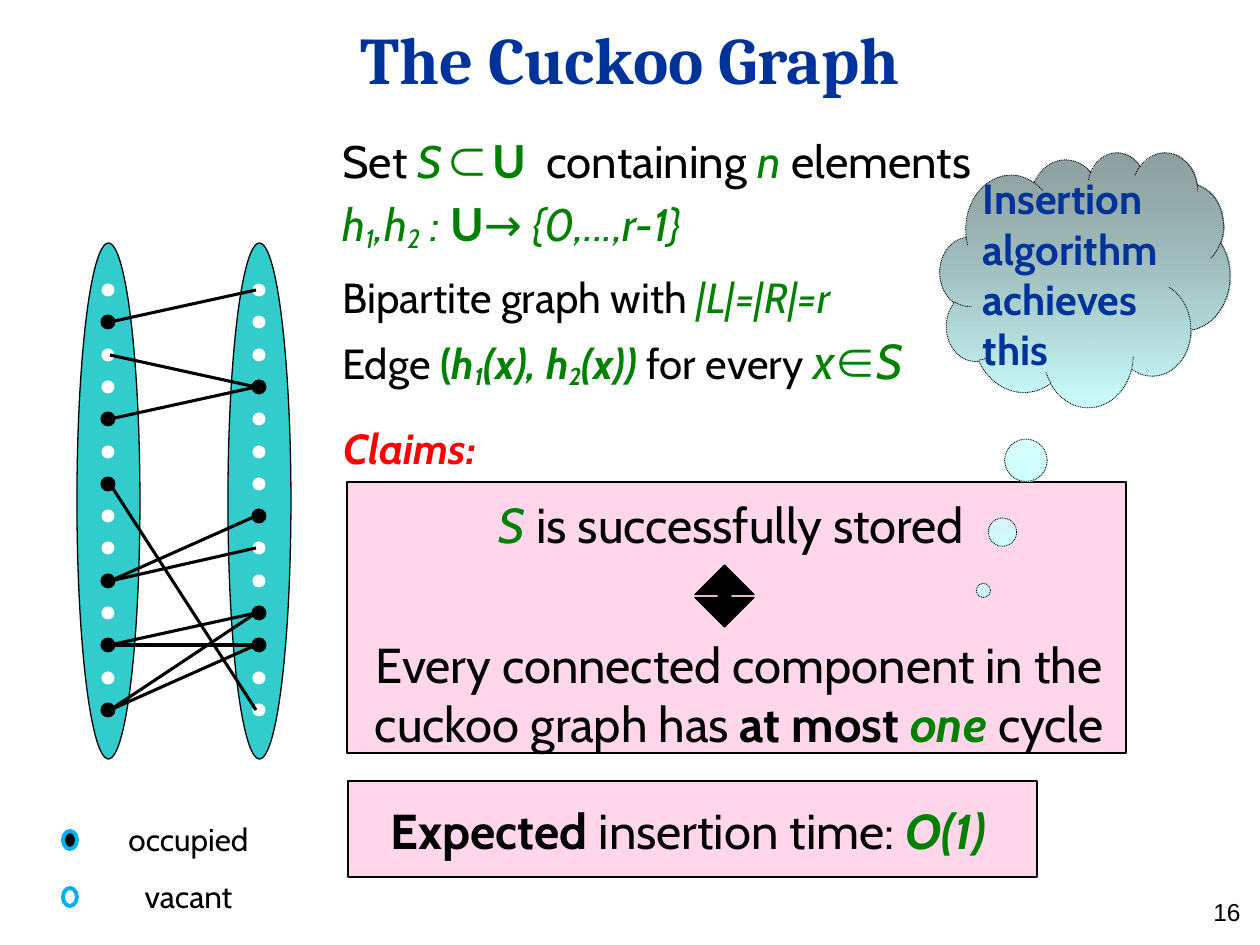
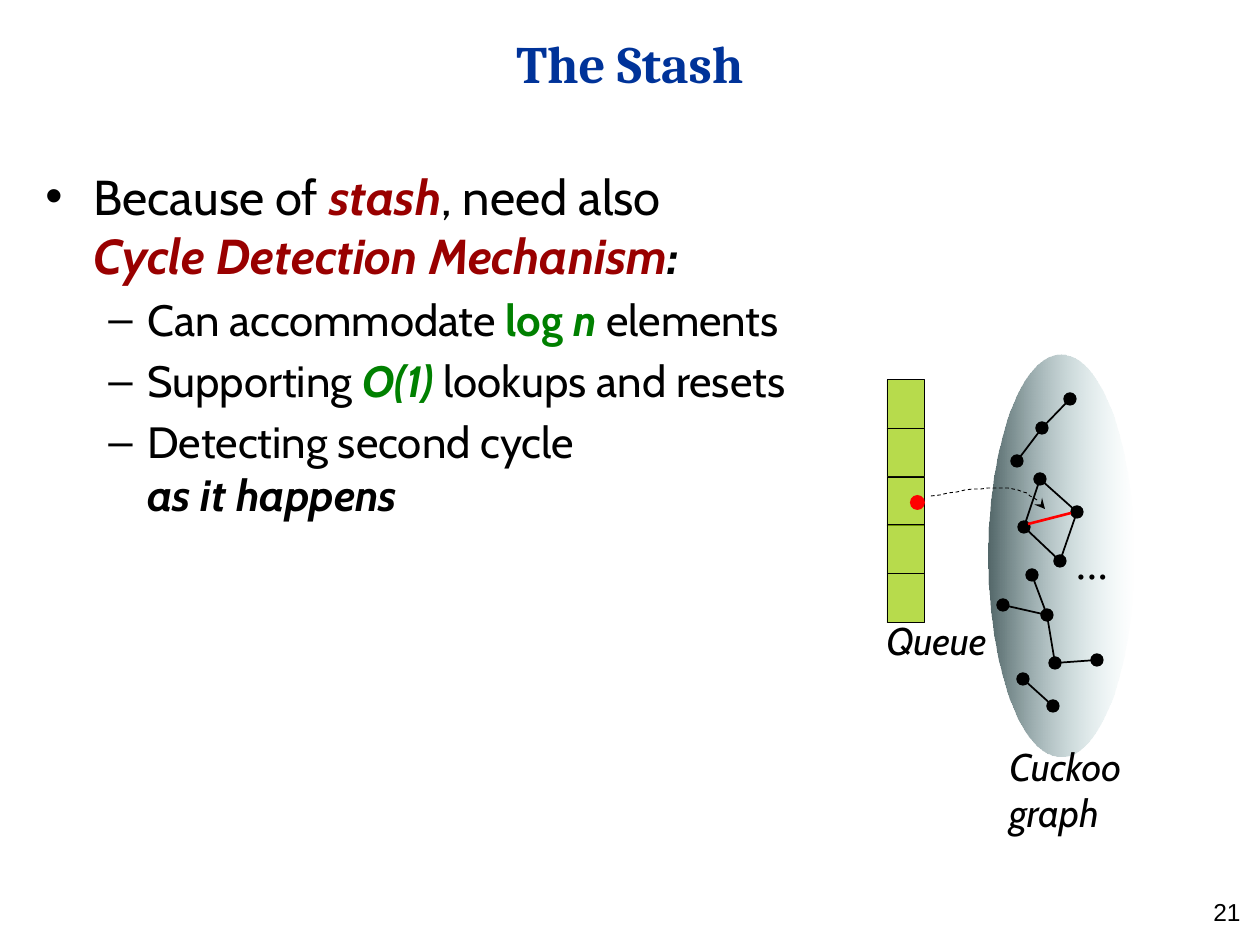
from lxml.etree import SubElement
from pptx import Presentation
from pptx.dml.color import RGBColor
from pptx.enum.dml import MSO_LINE
from pptx.enum.shapes import MSO_CONNECTOR, MSO_SHAPE
from pptx.enum.text import MSO_ANCHOR, PP_ALIGN
from pptx.oxml.ns import qn
from pptx.util import Pt

EMU_PER_PX = 914400 / 126
COLOURS = {
    "black": "000000", "white": "FFFFFF", "navy": "003399", "green": "008000",
    "red": "FF0000", "maroon": "990000", "pink": "FF99CC", "teal": "33CCCC",
    "sky": "00B0F0", "lime": "99CC00", "slate": "536769", "mist": "BBE0E3",
    "cloud_top": "5E7676", "cloud_bottom": "CCFFFF",
}
FONTS = {
    "cabin": "Cabin", "lato": "Lato", "cambria": "Cambria", "arial": "Arial",
    "times": "Times New Roman", "subset": "Noto Sans CJK KR", "member": "Noto Sans CJK SC",
}
RGB = {name: RGBColor.from_string(value) for name, value in COLOURS.items()}
CENTER, RIGHT, LEFT = PP_ALIGN.CENTER, PP_ALIGN.RIGHT, PP_ALIGN.LEFT


def add_shape(slide, kind, box, fill=(), line=None, width=0.75, angle=0):
    """Fill is a list of (colour, opacity percent): none, one solid, or two gradient stops."""
    shape = slide.shapes.add_shape(kind, *[round(v * EMU_PER_PX) for v in box])
    shape.shadow.inherit = False
    if len(fill) == 2:
        shape.fill.gradient()
        shape.fill.gradient_angle = angle
        for stop, (colour, _) in zip(shape.fill.gradient_stops, fill):
            stop.color.rgb = RGB[colour]
    elif fill:
        shape.fill.solid()
        shape.fill.fore_color.rgb = RGB[fill[0][0]]
    else:
        shape.fill.background()
    colour_nodes = list(shape._element.spPr.iter(qn("a:srgbClr")))
    for node, (_, opacity) in zip(colour_nodes, fill):
        if opacity < 100:
            SubElement(node, qn("a:alpha")).set("val", str(opacity * 1000))
    if line:
        shape.line.color.rgb = RGB[line]
        shape.line.width = Pt(width)
    else:
        shape.line.fill.background()
    return shape


def add_text(slide, box, paragraphs, size, align=LEFT, anchor=MSO_ANCHOR.TOP, shape=None):
    """Write runs of (text, style words) into a new text box, or into the given shape."""
    shape = shape or slide.shapes.add_textbox(*[round(v * EMU_PER_PX) for v in box])
    frame = shape.text_frame
    frame.word_wrap = True
    frame.vertical_anchor = anchor
    for index, runs in enumerate(paragraphs):
        paragraph = frame.add_paragraph() if index else frame.paragraphs[0]
        paragraph.alignment = align
        if index:
            paragraph.space_before = Pt(round(size * 0.2))
        for text, style in runs:
            if text == "\n":
                paragraph.add_line_break()
                continue
            run = paragraph.add_run()
            run.text = text
            words = style.split()
            font = run.font
            font.bold = "b" in words
            font.italic = "i" in words
            font.size = Pt(next((int(w) for w in words if w.isdigit()), size))
            font.color.rgb = RGB[next((w for w in words if w in COLOURS), "black")]
            font.name = FONTS[next((w for w in words if w in FONTS), "cabin")]
            properties = run._r.get_or_add_rPr()
            SubElement(properties, qn("a:ea")).set("typeface", font.name)
            if "sub" in words:
                properties.set("baseline", "-15000")
    return shape


presentation = Presentation()
presentation.slide_width = round(1260 * EMU_PER_PX)
presentation.slide_height = round(945 * EMU_PER_PX)

slides = []
for title, title_size, title_top, number in [
    ("The Cuckoo Graph", 38, 5, "16"),
    ("The Stash", 30, 10, "21"),
]:
    slide = presentation.slides.add_slide(presentation.slide_layouts[6])
    add_text(slide, (0, title_top, 1260, 105), [[(title, "b navy cambria")]],
             title_size, CENTER, MSO_ANCHOR.MIDDLE)
    add_text(slide, (960, 891, 293, 35), [[(number, "arial")]], 14, RIGHT)
    slides.append(slide)
graph_slide, stash_slide = slides

# The cuckoo graph: definitions
add_text(graph_slide, (330, 127, 717, 154), [
    [("Set ", ""), ("S", "green i"), (" ", "10"), ("⊂", "green 24 subset"), (" ", "10"),
     ("U", "green b lato"), ("  containing ", ""), ("n", "green i"), (" elements", "")],
    [("h", "green i"), ("1", "green i sub"), (",h", "green i"), ("2", "green i sub"),
     (" : ", "green i"), ("U", "green b lato"), ("→ {0,...,r-1}", "green i")],
], 26)
add_text(graph_slide, (330, 265, 620, 147), [
    [("Bipartite graph with ", ""), ("|L|=|R|=r", "green i")],
    [("Edge ", ""), ("(", "green b"), ("h", "green b i"), ("1", "green b i sub"),
     ("(x), h", "green b i"), ("2", "green b i sub"), ("(x)) ", "green b i"),
     ("for every ", ""), ("x", "green i 28"), ("∈", "green member"), ("S", "green i 28")],
], 24)

# Claims
add_text(graph_slide, (331, 416, 180, 84), [[("Claims:", "red b i")]], 24)
for claim_box in [(347, 482, 779, 271), (348, 781, 689, 96)]:
    add_shape(graph_slide, MSO_SHAPE.RECTANGLE, claim_box, [("pink", 40)], "black")
for claim_box, runs in [
    ((323, 488, 828, 72), [("S", "green i"), (" is successfully stored ", "")]),
    ((325, 628, 828, 131), [("Every connected component in the cuckoo graph has ", ""),
                            ("at most ", "b"), ("one", "green b i"), (" cycle", "")]),
    ((372, 794, 644, 72), [("Expected", "b"), (" insertion time: ", ""),
                           ("O(1) ", "green b i")]),
]:
    add_text(graph_slide, claim_box, [runs], 28, CENTER)
equivalence = add_shape(graph_slide, MSO_SHAPE.UP_DOWN_ARROW, (695, 565, 59, 62),
                        [("black", 100)], "black")
equivalence.adjustments[0] = 0.5
equivalence.adjustments[1] = 0.21

# Bipartite graph
ROWS = 14
row_centres = [290 + round(420 * row / (ROWS - 1)) for row in range(ROWS)]
for centre_x, occupied_rows in [(108, {1, 4, 6, 9, 11, 13}), (259, {3, 7, 10, 11})]:
    add_shape(graph_slide, MSO_SHAPE.OVAL, (centre_x - 31, 243, 63, 516),
              [("teal", 100)], "black")
    for row, centre_y in enumerate(row_centres):
        colour, diameter = ("black", 15) if row in occupied_rows else ("white", 13)
        add_shape(graph_slide, MSO_SHAPE.OVAL,
                  (centre_x - diameter / 2, centre_y - diameter / 2, diameter, diameter),
                  [(colour, 100)])
element_edges = [(1, 0), (2, 3), (4, 3), (6, 13), (9, 7), (9, 8),
                 (11, 10), (11, 11), (13, 11), (13, 10)]
lines = [(graph_slide, (110, row_centres[left]), (256, row_centres[right]), "black", 1.75)
         for left, right in element_edges]

# Legend
for label, centre_y, fill in [("occupied", 840, [("black", 100)]), ("vacant", 897, [])]:
    add_shape(graph_slide, MSO_SHAPE.OVAL, (63, centre_y - 9, 14, 18), fill, "sky", 2.25)
    add_text(graph_slide, (101, centre_y - 26, 175, 50), [[(label, "")]], 18, CENTER)

# Thought cloud
cloud = add_shape(graph_slide, MSO_SHAPE.CLOUD_CALLOUT, (940, 152, 290, 255),
                  [("cloud_top", 70), ("cloud_bottom", 100)], "black", 0.5, 270)
cloud.line.dash_style = MSO_LINE.ROUND_DOT
cloud.adjustments[0] = -0.35
cloud.adjustments[1] = 1.22
add_text(graph_slide, None, [[("Insertion algorithm achieves this", "navy b")]], 24,
         anchor=MSO_ANCHOR.MIDDLE, shape=cloud)
cloud_frame = cloud.text_frame
cloud_frame.margin_left = cloud_frame.margin_right = round(3 * EMU_PER_PX)
cloud_frame.margin_top = cloud_frame.margin_bottom = round(3 * EMU_PER_PX)

# The stash: bullets
bullets = add_text(stash_slide, (33, 160, 1227, 575), [
    [("Because of ", "28"), ("stash", "28 maroon b i"), (", need also ", "28"), ("\n", ""),
     ("Cycle Detection Mechanism", "28 maroon b i"), (":", "28 b i")],
    [("Can accommodate ", ""), ("log", "green b"), (" n", "green b i"), (" elements", "")],
    [("Supporting ", ""), ("O(1)", "green b i"), (" lookups and resets", "")],
    [("Detecting second cycle ", ""), ("\n", ""), ("as it happens", "b i")],
], 25)
for index, paragraph in enumerate(bullets.text_frame.paragraphs):
    mark, margin, hanging = ("–", 102, 39) if index else ("•", 48, 48)
    properties = paragraph._p.get_or_add_pPr()
    properties.set("marL", str(round(margin * EMU_PER_PX)))
    properties.set("indent", str(round(-hanging * EMU_PER_PX)))
    SubElement(properties, qn("a:buFont")).set("typeface", "Arial")
    SubElement(properties, qn("a:buChar")).set("char", mark)

# Queue
for cell in range(5):
    add_shape(stash_slide, MSO_SHAPE.RECTANGLE, (887, 380 + 97 * cell // 2, 38, 49),
              [("lime", 70)], "black", 0.5)
add_text(stash_slide, (857, 611, 159, 59), [[("Queue", "i")]], 22, CENTER)

# Components of the cuckoo graph
add_shape(stash_slide, MSO_SHAPE.OVAL, (988, 355, 145, 402), [("slate", 100), ("mist", 0)])
add_text(stash_slide, (997, 737, 171, 105), [[("Cuckoo", "i"), ("\n", ""), ("graph", "i")]], 22)
add_text(stash_slide, (1057, 530, 72, 66), [[("...", "i times")]], 25, CENTER)
components = [
    ([(1017, 461), (1042, 428), (1070, 399)], [(0, 1), (1, 2)]),
    ([(1040, 479), (1077, 512), (1060, 561), (1024, 527)], [(0, 1), (1, 2), (2, 3), (3, 0)]),
    ([(1047, 615), (1003, 605), (1032, 575), (1055, 663), (1097, 660)],
     [(0, 1), (0, 2), (0, 3), (3, 4)]),
    ([(1023, 679), (1053, 706)], [(0, 1)]),
]
for nodes, edges in components:
    for x, y in nodes:
        add_shape(stash_slide, MSO_SHAPE.OVAL, (x - 6, y - 6, 12, 12), [("black", 100)], "black")
    lines += [(stash_slide, nodes[a], nodes[b], "black", 1) for a, b in edges]
lines.append((stash_slide, (1028, 524), (1071, 513), "red", 1.5))

# Queued element and its way into the cycle
add_shape(stash_slide, MSO_SHAPE.OVAL, (910, 495, 15, 15), [("red", 100)])
curves = [((931, 496), (960, 491), (989, 486), (1008, 488)),
          ((1008, 488), (1027, 490), (1036, 499), (1045, 509))]
STEPS = 10
curve_points = []
for start, first, second, end in curves:
    for t in [step / STEPS for step in range(1, STEPS + 1)]:
        weights = ((1 - t) ** 3, 3 * t * (1 - t) ** 2, 3 * t * t * (1 - t), t ** 3)
        curve_points.append(tuple(
            sum(weight * point[axis] for weight, point in zip(weights, (start, first, second, end)))
            for axis in (0, 1)))
builder = stash_slide.shapes.build_freeform(*curves[0][0], scale=EMU_PER_PX)
builder.add_line_segments(curve_points, close=False)
arrow = builder.convert_to_shape()
arrow.shadow.inherit = False
arrow.fill.background()
arrow.line.color.rgb = RGB["black"]
arrow.line.width = Pt(0.5)
arrow.line.dash_style = MSO_LINE.DASH
SubElement(arrow.line._get_or_add_ln(), qn("a:tailEnd")).set("type", "stealth")

# Edges of both graphs
for slide, start, end, colour, width in lines:
    connector = slide.shapes.add_connector(
        MSO_CONNECTOR.STRAIGHT, *[round(v * EMU_PER_PX) for v in start + end])
    connector.line.color.rgb = RGB[colour]
    connector.line.width = Pt(width)
    SubElement(connector._element.spPr, qn("a:effectLst"))

presentation.save("out.pptx")
